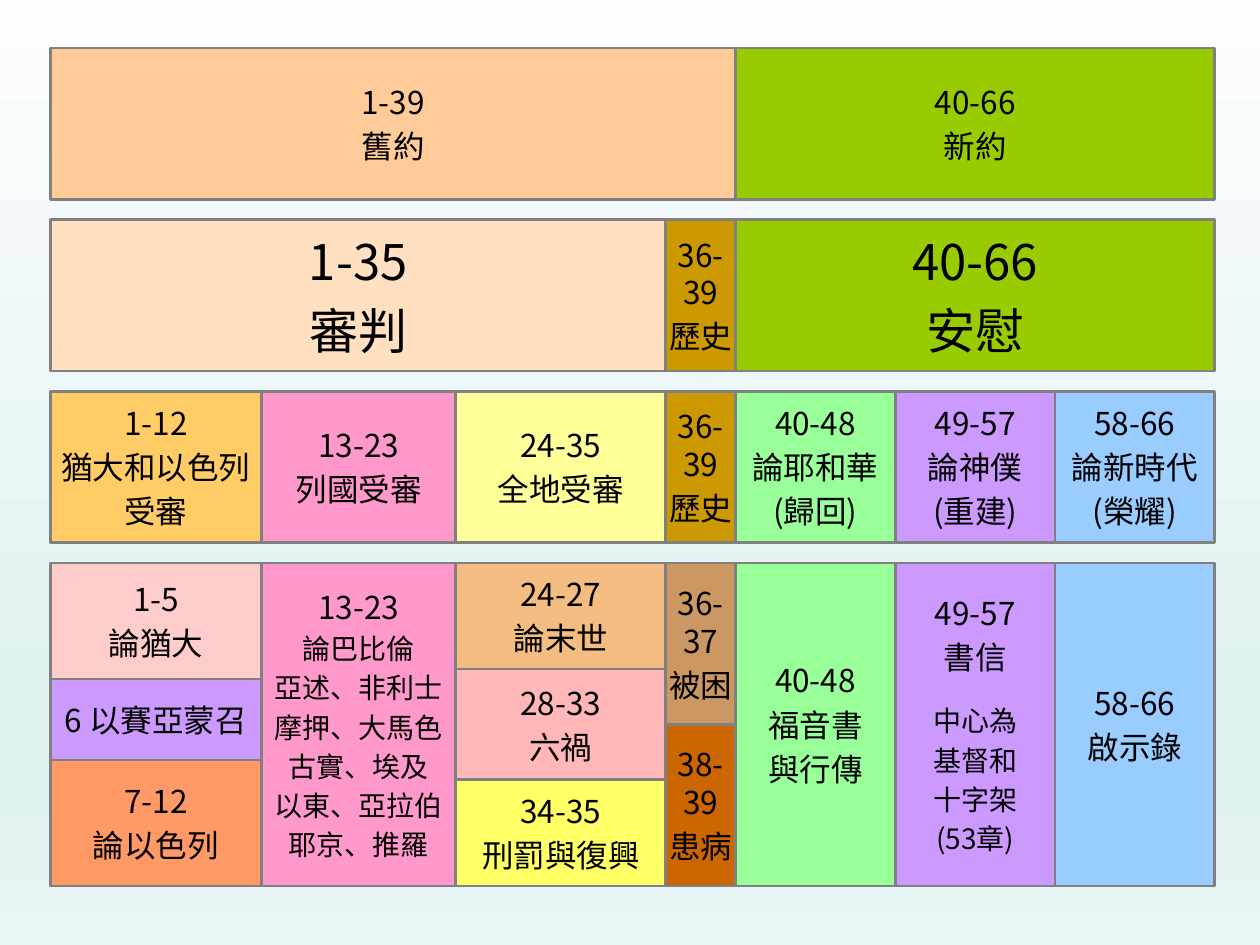
from lxml import etree
from pptx import Presentation
from pptx.dml.color import RGBColor
from pptx.enum.shapes import MSO_SHAPE
from pptx.enum.text import MSO_ANCHOR, PP_ALIGN
from pptx.oxml.ns import qn
from pptx.util import Cm, Pt

FONT = "Noto Sans CJK SC"
BACKGROUND_STOPS = [(0, "FCFDFE"), (74, "E0F1F2"), (83, "E0F1F2"), (100, "EBF6F7")]

COLUMN_EDGES = [1.02, 5.27, 9.19, 13.42, 14.83, 18.05, 21.27, 24.49]
BAND_TOP, BAND_PITCH, BAND_HEIGHT = 0.97, 3.46, 3.05
DETAIL_TOP, DETAIL_BOTTOM = BAND_TOP + 3 * BAND_PITCH, 17.86

HISTORY = (3, 4, "CC9900", "36-\n39\n歷史", {})
# Each cell: first column edge, last column edge, fill, text, text format
BANDS = [
    [
        (0, 4, "FFCC99", "1-39\n舊約", {}),
        (4, 7, "99CC00", "40-66\n新約", {}),
    ],
    [
        (0, 3, "FFE0C1", "1-35\n審判", {"size": 28}),
        HISTORY,
        (4, 7, "99CC00", "40-66\n安慰", {"size": 28}),
    ],
    [
        (0, 1, "FFCC66", "1-12\n猶大和以色列\n受審", {}),
        (1, 2, "FF99CC", "13-23\n列國受審", {}),
        (2, 3, "FFFF99", "24-35\n全地受審", {}),
        HISTORY,
        (4, 5, "99FF99", "40-48\n論耶和華\n(歸回)", {}),
        (5, 6, "CC99FF", "49-57\n論神僕\n(重建)", {}),
        (6, 7, "99CCFF", "58-66\n論新時代\n(榮耀)", {}),
    ],
]

NATIONS = "論巴比倫\n亞述、非利士\n摩押、大馬色\n古實、埃及\n以東、亞拉伯\n耶京、推羅"
CENTRE = "中心為\n基督和\n十字架\n(53章)"
# Each column: inner row edges, then the fill, text and text format of its cells
DETAIL_COLUMNS = [
    ([13.69, 15.32], [
        ("FFCCCC", "1-5\n論猶大", {}),
        ("CC99FF", "6 以賽亞蒙召", {}),
        ("FF9966", "7-12\n論以色列", {}),
    ]),
    ([], [("FF99CC", "13-23", {"details": NATIONS})]),
    ([13.49, 15.72], [
        ("F3BD81", "24-27\n論末世", {}),
        ("FFB7B7", "28-33\n六禍", {}),
        ("FFFF66", "34-35\n刑罰與復興", {}),
    ]),
    ([14.6], [
        ("CB9763", "36-\n37\n被困", {}),
        ("CC6600", "38-\n39\n患病", {}),
    ]),
    ([], [("99FF99", "40-48\n福音書\n與行傳", {})]),
    ([], [("CC99FF", "49-57\n書信", {"details": CENTRE, "detail_gap": 12.6})]),
    ([], [("99CCFF", "58-66\n啟示錄", {})]),
]


def colour(hex_string):
    return RGBColor.from_string(hex_string)


def write_text(frame, text, size=18, details="", detail_size=16, detail_gap=0):
    """Write one paragraph per line, with the smaller detail lines below."""
    lines = [(line, size) for line in text.split("\n")]
    heading_count = len(lines)
    lines += [(line, detail_size) for line in details.splitlines()]
    for number, (line, points) in enumerate(lines, start=1):
        paragraph = frame.paragraphs[0] if number == 1 else frame.add_paragraph()
        paragraph.alignment = PP_ALIGN.CENTER
        # A chapter range broken after its hyphen stays close to its second half
        space = 0 if line.endswith("-") else 0.2 * points
        if number == heading_count:
            space += detail_gap
        paragraph.space_after = Pt(space)
        run = paragraph.add_run()
        run.text = line
        run.font.size = Pt(points)
        run.font.name = FONT
        run.font.color.rgb = colour("000000")
        east_asian = etree.SubElement(run.font._element, qn("a:ea"))
        east_asian.set("typeface", FONT)


class ChartSlide:
    def __init__(self, slide, line_colour="808080", line_width=1.5):
        self.slide = slide
        self.line_colour = line_colour
        self.line_width = line_width

    def background(self, stops):
        fill = self.slide.background.fill
        fill.gradient()
        fill.gradient_angle = 270
        stop_list = next(self.slide.element.iter(qn("a:gsLst")))
        for stop in list(stop_list):
            stop_list.remove(stop)
        for percent, hex_string in stops:
            stop = etree.SubElement(stop_list, qn("a:gs"), pos=str(percent * 1000))
            etree.SubElement(stop, qn("a:srgbClr"), val=hex_string)

    def cell(self, columns, rows, fill, text, **text_format):
        """Add a box between two column edges and two row edges."""
        (left, right), (top, bottom) = columns, rows
        shape = self.slide.shapes.add_shape(
            MSO_SHAPE.RECTANGLE, Cm(left), Cm(top), Cm(right - left), Cm(bottom - top)
        )
        shape.shadow.inherit = False
        shape.fill.solid()
        shape.fill.fore_color.rgb = colour(fill)
        shape.line.color.rgb = colour(self.line_colour)
        shape.line.width = Pt(self.line_width)
        frame = shape.text_frame
        frame.word_wrap = False
        frame.vertical_anchor = MSO_ANCHOR.MIDDLE
        write_text(frame, text, **text_format)


def main():
    presentation = Presentation()
    presentation.slide_width, presentation.slide_height = Cm(25.4), Cm(19.05)
    chart = ChartSlide(presentation.slides.add_slide(presentation.slide_layouts[6]))
    chart.background(BACKGROUND_STOPS)

    for index, band in enumerate(BANDS):
        top = BAND_TOP + index * BAND_PITCH
        for first, last, fill, text, text_format in band:
            columns = COLUMN_EDGES[first], COLUMN_EDGES[last]
            chart.cell(columns, (top, top + BAND_HEIGHT), fill, text, **text_format)

    column_spans = zip(COLUMN_EDGES, COLUMN_EDGES[1:])
    for columns, (inner_edges, cells) in zip(column_spans, DETAIL_COLUMNS):
        edges = [DETAIL_TOP, *inner_edges, DETAIL_BOTTOM]
        for rows, (fill, text, text_format) in zip(zip(edges, edges[1:]), cells):
            chart.cell(columns, rows, fill, text, **text_format)

    presentation.save("out.pptx")


if __name__ == "__main__":
    main()
